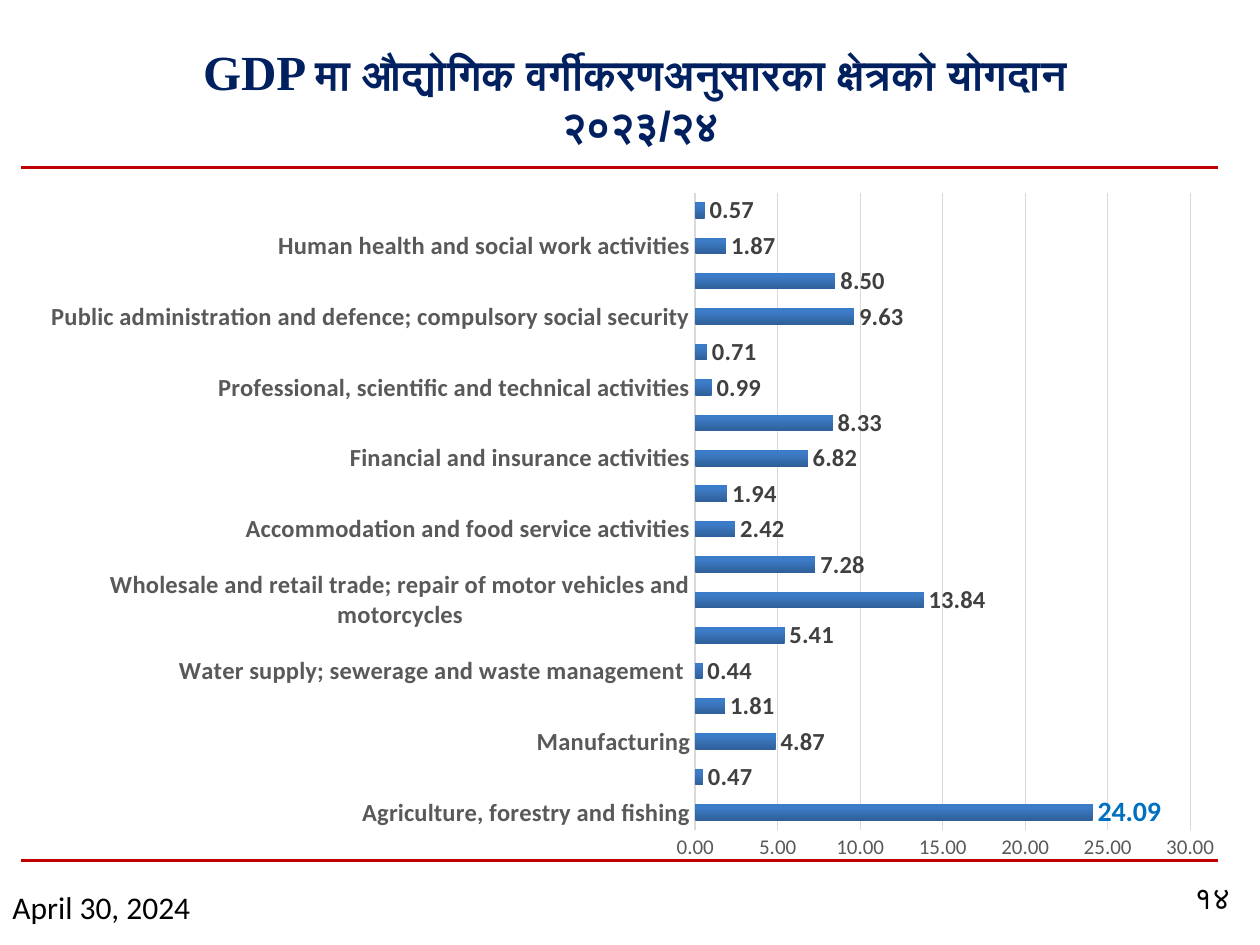
"""Build the slide on sector contributions to GDP in 2023/24."""
from copy import deepcopy
from dataclasses import dataclass

from lxml import etree
from pptx import Presentation
from pptx.chart.data import CategoryChartData
from pptx.chart.chart import Chart
from pptx.dml.color import RGBColor
from pptx.enum.chart import XL_CHART_TYPE, XL_LABEL_POSITION, XL_TICK_MARK
from pptx.enum.shapes import MSO_CONNECTOR
from pptx.enum.text import MSO_ANCHOR, PP_ALIGN
from pptx.oxml import parse_xml
from pptx.oxml.ns import nsdecls, qn
from pptx.slide import Slide
from pptx.text.text import Font
from pptx.util import Inches, Pt

BAR_CLUSTERED = XL_CHART_TYPE.BAR_CLUSTERED
OUTSIDE_END = XL_LABEL_POSITION.OUTSIDE_END
NO_TICK = XL_TICK_MARK.NONE
STRAIGHT = MSO_CONNECTOR.STRAIGHT
MIDDLE = MSO_ANCHOR.MIDDLE
LEFT, CENTER = PP_ALIGN.LEFT, PP_ALIGN.CENTER

NAVY = RGBColor(0x00, 0x20, 0x60)
RED = RGBColor(0xC0, 0x00, 0x00)
BLACK = RGBColor(0x00, 0x00, 0x00)
AXIS_GRAY = RGBColor(0x59, 0x59, 0x59)
LABEL_GRAY = RGBColor(0x40, 0x40, 0x40)
GRID_GRAY = RGBColor(0xD9, 0xD9, 0xD9)
HIGHLIGHT = RGBColor(0x00, 0x70, 0xC0)
BAR_GRADIENT = (
    (0, RGBColor(0x2F, 0x5F, 0x99)),
    (0.8, RGBColor(0x3D, 0x7C, 0xC7)),
    (1, RGBColor(0x3A, 0x7C, 0xCB)),
)

SECTORS = {
    "Agriculture, forestry and fishing": 24.09,
    "Mining and quarrying": 0.47,
    "Manufacturing": 4.87,
    "Electricity and gas": 1.81,
    "Water supply; sewerage and waste management ": 0.44,
    "Construction": 5.41,
    "Wholesale and retail trade; repair of motor vehicles and motorcycles": 13.84,
    "Transportation and storage": 7.28,
    "Accommodation and food service activities": 2.42,
    "Information and communication": 1.94,
    "Financial and insurance activities": 6.82,
    "Real estate activities": 8.33,
    "Professional, scientific and technical activities": 0.99,
    "Administrative and support service activities": 0.71,
    "Public administration and defence; compulsory social security": 9.63,
    "Education": 8.5,
    "Human health and social work activities": 1.87,
    "Other Services": 0.57,
}
PLOT_AREA = {"x": 0.55, "y": 0.02, "w": 0.41, "h": 0.92}


@dataclass(frozen=True)
class Footer:
    text: str
    left: float
    top: float
    width: float
    height: float
    font: str
    align: PP_ALIGN


FOOTERS = (
    Footer("April 30, 2024", 0, 7, 2.17, 0.41, "Calibri", LEFT),
    Footer("१४", 9.33, 6.92, 0.58, 0.48, "Roboto", CENTER),
)
RULE_HEIGHTS = (1.33, 6.83)


def style_font(font: Font, name: str, size: float, color: RGBColor, bold: bool = False) -> None:
    font.name = name
    font.size = Pt(size)
    font.color.rgb = color
    font.bold = bold


def draw_rule(slide: Slide, height: float) -> None:
    rule = slide.shapes.add_connector(
        STRAIGHT, Inches(0.17), Inches(height), Inches(9.67), Inches(height))
    rule.line.color.rgb = RED
    rule.line.width = Pt(1.5)
    etree.SubElement(rule._element.spPr, qn("a:effectLst"))


def write_title(slide: Slide) -> None:
    title = slide.shapes.title
    title.left, title.top = Inches(0.25), Inches(0.17)
    title.width, title.height = Inches(9.67), Inches(1.18)
    title.text_frame.vertical_anchor = MIDDLE
    heading = title.text_frame.paragraphs[0]
    heading.alignment = CENTER
    measure = heading.add_run()
    measure.text = "GDP "
    style_font(measure.font, "Times New Roman", 28, NAVY, True)
    subject = heading.add_run()
    subject.text = "मा औद्योगिक वर्गीकरणअनुसारका क्षेत्रको योगदान "
    heading.add_line_break()
    year = heading.add_run()
    year.text = "२०२३/२४"
    for run in (subject, year):
        style_font(run.font, "Arial", 24, NAVY, True)
    heading._p.find(qn("a:br")).insert(0, deepcopy(year._r.rPr))


def draw_footer(slide: Slide, footer: Footer) -> None:
    box = slide.shapes.add_textbox(
        Inches(footer.left), Inches(footer.top), Inches(footer.width), Inches(footer.height))
    box.text_frame.word_wrap = True
    box.text_frame.text = footer.text
    line = box.text_frame.paragraphs[0]
    line.alignment = footer.align
    style_font(line.runs[0].font, footer.font, 18, BLACK)


def style_axes(chart: Chart) -> None:
    sectors, shares = chart.category_axis, chart.value_axis
    for axis in (sectors, shares):
        axis.major_tick_mark = axis.minor_tick_mark = NO_TICK
    style_font(sectors.tick_labels.font, "Calibri", 14, AXIS_GRAY, True)
    sectors.format.line.color.rgb = GRID_GRAY
    sectors.format.line.width = Pt(1)
    skip = parse_xml(f'<c:tickLblSkip {nsdecls("c")} val="2"/>')
    sectors._element.find(qn("c:noMultiLvlLbl")).addprevious(skip)

    style_font(shares.tick_labels.font, "Calibri", 12, AXIS_GRAY)
    shares.tick_labels.number_format = "0.00"
    shares.tick_labels.number_format_is_linked = False
    shares.minimum_scale, shares.maximum_scale, shares.major_unit = 0, 30, 5
    shares.format.line.fill.background()
    shares.major_gridlines.format.line.color.rgb = GRID_GRAY
    shares.major_gridlines.format.line.width = Pt(0.75)


def style_bars(chart: Chart) -> None:
    plot = chart.plots[0]
    plot.gap_width, plot.overlap = 115, -20
    plot.vary_by_categories = False
    series = plot.series[0]
    fill = series.format.fill
    fill.gradient()
    fill.gradient_angle = 90
    stops = series._element.find(".//" + qn("a:gsLst"))
    stops.append(deepcopy(stops[-1]))
    for stop, (position, color) in zip(fill.gradient_stops, BAR_GRADIENT):
        stop.position = position
        stop.color.rgb = color

    labels = series.data_labels
    labels.show_value = True
    labels.number_format = "0.00"
    labels.number_format_is_linked = False
    labels.position = OUTSIDE_END
    style_font(labels.font, "Calibri", 14, LABEL_GRAY, True)
    agriculture = series.points[0].data_label
    style_font(agriculture.font, "Calibri", 16, HIGHLIGHT, True)
    agriculture.position = OUTSIDE_END


def place_plot(chart: Chart) -> None:
    plot_area = chart._chartSpace.chart.plotArea
    for layout in plot_area.findall(qn("c:layout")):
        plot_area.remove(layout)
    modes = '<c:xMode val="edge"/><c:yMode val="edge"/>'
    sizes = "".join(f'<c:{key} val="{value}"/>' for key, value in PLOT_AREA.items())
    plot_area.insert(0, parse_xml(
        f'<c:layout {nsdecls("c")}><c:manualLayout><c:layoutTarget val="inner"/>'
        f"{modes}{sizes}</c:manualLayout></c:layout>"))


def draw_chart(slide: Slide) -> None:
    shares = CategoryChartData(number_format="0.00")
    shares.categories = list(SECTORS)
    shares.add_series("Series 1", list(SECTORS.values()))
    chart = slide.shapes.add_chart(
        BAR_CLUSTERED, Inches(0.25), Inches(1.42), Inches(9.58), Inches(5.5), shares).chart
    chart.has_legend = False
    chart.has_title = False
    style_font(chart.font, "Calibri", 10, BLACK)
    style_axes(chart)
    style_bars(chart)
    place_plot(chart)


def main() -> None:
    deck = Presentation()
    deck.slide_width, deck.slide_height = Inches(10), Inches(7.5)
    slide = deck.slides.add_slide(deck.slide_layouts[5])
    for height in RULE_HEIGHTS:
        draw_rule(slide, height)
    write_title(slide)
    draw_chart(slide)
    for footer in FOOTERS:
        draw_footer(slide, footer)
    deck.save("out.pptx")


if __name__ == "__main__":
    main()
